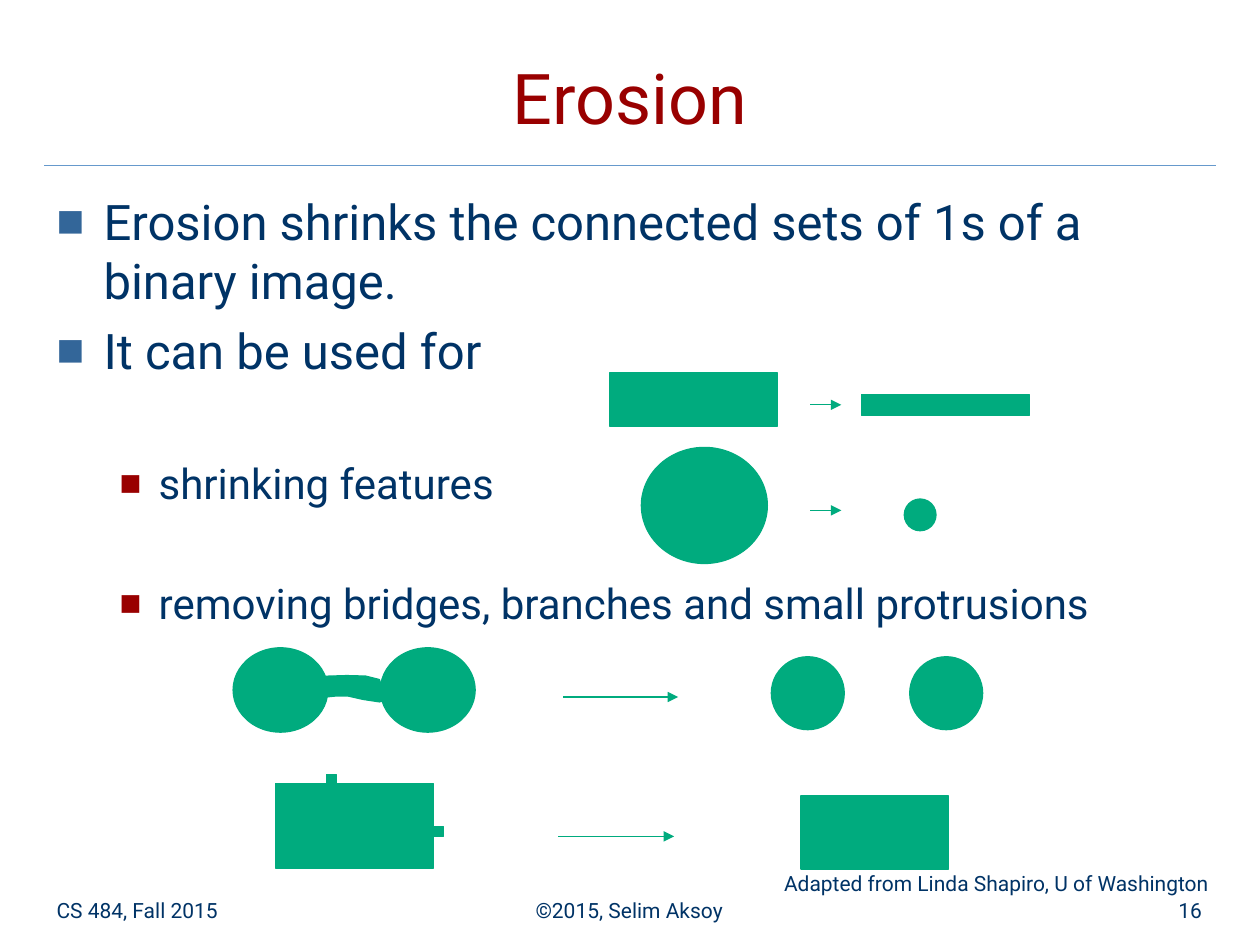
"""Builds the lecture slide on erosion with its bullets and shape diagrams."""
from dataclasses import dataclass

from lxml.etree import SubElement
from pptx import Presentation
from pptx.dml.color import RGBColor
from pptx.enum.shapes import MSO_CONNECTOR, MSO_SHAPE
from pptx.enum.text import MSO_ANCHOR, PP_ALIGN
from pptx.oxml.ns import qn
from pptx.util import Cm, Pt

FONT = "Roboto"
COLORS = {
    "title": "990000",
    "text": "003366",
    "rule": "6699CC",
    "bullet": "336699",
    "sub_bullet": "990000",
    "feature": "00AB7E",
}
BULLETS = [
    ("Erosion shrinks the connected sets of 1s of a binary image.", 0, 0),
    ("It can be used for", 0, 6.5),
    ("shrinking features", 1, 45),
    ("removing bridges, branches and small protrusions", 1, 39.5),
]
LEVELS = [
    {"size": 28, "margin": 0.95, "hang": 0.95, "color": "bullet", "scale": 60},
    {"size": 24, "margin": 2.06, "hang": 0.79, "color": "sub_bullet", "scale": 55},
]
BRIDGE = [
    (1.63, 0.58), (2.29, 0.56), (2.67, 0.57), (2.95, 0.64), (3, 0.81),
    (3.02, 1.07), (2.95, 1.09), (2.62, 1.04), (2.31, 0.97), (2.08, 0.97),
    (1.88, 0.99), (1.7, 1.04), (1.7, 0.84),
]


@dataclass
class Box:
    """A region of the page in centimetres."""
    left: float
    top: float
    width: float
    height: float


def color(name):
    """Return the named colour."""
    return RGBColor.from_string(COLORS[name])


def style_para(para, size, name, align=PP_ALIGN.LEFT):
    """Format a paragraph and its runs."""
    para.alignment = align
    for span in para.runs:
        span.font.size = Pt(size)
        span.font.name = FONT
        span.font.color.rgb = color(name)


def add_frame(page, box, anchor=MSO_ANCHOR.TOP):
    """Add a wrapping text box and return its text frame."""
    shape = page.shapes.add_textbox(
        Cm(box.left), Cm(box.top), Cm(box.width), Cm(box.height))
    frame = shape.text_frame
    frame.word_wrap = True
    frame.vertical_anchor = anchor
    return frame


def add_label(page, box, text, size, name, align, anchor=MSO_ANCHOR.BOTTOM):
    """Add a single line of text."""
    frame = add_frame(page, box, anchor)
    frame.text = text
    style_para(frame.paragraphs[0], size, name, align)


def add_line(shapes, start, end, name, arrow=False):
    """Add a thin straight line, with an arrowhead if wanted."""
    line = shapes.add_connector(
        MSO_CONNECTOR.STRAIGHT, *(Cm(value) for value in (*start, *end)))
    line.line.color.rgb = color(name)
    line.line.width = Pt(0.75)
    if arrow:
        SubElement(line.line._get_or_add_ln(), qn("a:tailEnd"), type="triangle")
    SubElement(line._element.spPr, qn("a:effectLst"))


def style_feature(shape):
    """Give a shape the solid feature colour."""
    shape.shadow.inherit = False
    shape.fill.solid()
    shape.fill.fore_color.rgb = color("feature")
    shape.line.color.rgb = color("feature")
    shape.line.width = Pt(0.75)


def add_feature(shapes, box, kind, left, top, width, height):
    """Add a solid shape at an offset inside the box."""
    style_feature(shapes.add_shape(
        kind, Cm(box.left + left), Cm(box.top + top), Cm(width), Cm(height)))


def add_arrow(shapes, box, left, right, top):
    """Add a horizontal arrow at an offset inside the box."""
    add_line(shapes, (box.left + left, box.top + top),
             (box.left + right, box.top + top), "feature", arrow=True)


def add_header(page, box):
    """Place the title above a rule."""
    title = Box(box.left, box.top, box.width, 2.39)
    add_label(page, title, "Erosion", 40, "title", PP_ALIGN.CENTER)
    bottom = box.top + box.height
    add_line(page.shapes, (box.left, bottom), (box.left + box.width, bottom), "rule")


def add_bullet(para, level):
    """Give a paragraph a square bullet and a hanging indent."""
    properties = para._p.get_or_add_pPr()
    properties.set("marL", str(Cm(level["margin"])))
    properties.set("indent", str(-Cm(level["hang"])))
    tint = SubElement(properties, qn("a:buClr"))
    SubElement(tint, qn("a:srgbClr"), val=COLORS[level["color"]])
    SubElement(properties, qn("a:buSzPct"), val=str(level["scale"] * 1000))
    SubElement(properties, qn("a:buFont"), typeface=FONT)
    SubElement(properties, qn("a:buChar"), char="■")


def add_body(page, box):
    """Place the two-level bullet list."""
    frame = add_frame(page, box)
    for index, (text, depth, space) in enumerate(BULLETS):
        para = frame.add_paragraph() if index else frame.paragraphs[0]
        para.text = text
        para.level = depth
        para.space_before = Pt(space)
        style_para(para, LEVELS[depth]["size"], "text")
        add_bullet(para, LEVELS[depth])


def add_shrinking(page, box):
    """Draw a bar and a disc that shrink."""
    shapes = page.shapes.add_group_shape().shapes
    add_feature(shapes, box, MSO_SHAPE.RECTANGLE, 0, 0, 3.38, 1.07)
    add_feature(shapes, box, MSO_SHAPE.RECTANGLE, 5.08, 0.43, 3.38, 0.43)
    add_feature(shapes, box, MSO_SHAPE.OVAL, 0.64, 1.5, 2.54, 2.34)
    add_feature(shapes, box, MSO_SHAPE.OVAL, 5.94, 2.54, 0.64, 0.64)
    for top in (0.64, 2.77):
        add_arrow(shapes, box, 4.04, 4.67, top)


def add_bridge_removal(page, box):
    """Draw two joined discs that come apart."""
    shapes = page.shapes.add_group_shape().shapes
    for left in (0, 2.97):
        add_feature(shapes, box, MSO_SHAPE.OVAL, left, 0, 1.91, 1.7)
    points = [(Cm(box.left + x), Cm(box.top + y)) for x, y in BRIDGE]
    builder = shapes.build_freeform(*points[0])
    builder.add_line_segments(points[1:], close=True)
    style_feature(builder.convert_to_shape())
    add_arrow(shapes, box, 6.65, 8.97, 0.99)
    for left in (10.85, 13.64):
        add_feature(shapes, box, MSO_SHAPE.OVAL, left, 0.18, 1.47, 1.47)


def add_protrusion_removal(page, box):
    """Draw a block that loses its small protrusions."""
    shapes = page.shapes.add_group_shape().shapes
    for left, top, width, height in (
            (0, 0.18, 3.18, 1.7), (3.18, 1.04, 0.2, 0.2),
            (1.02, 0, 0.2, 0.2), (10.59, 0.43, 2.97, 1.47)):
        add_feature(shapes, box, MSO_SHAPE.RECTANGLE, left, top, width, height)
    add_arrow(shapes, box, 5.69, 8.03, 1.24)


def add_footer(page, box):
    """Place the course, the copyright and the page number."""
    for text, left, width, align in (
            ("CS 484, Fall 2015", 0, 5.28, PP_ALIGN.LEFT),
            ("©2015, Selim Aksoy", 7.77, 8.05, PP_ALIGN.CENTER),
            ("16", 18.31, 5.28, PP_ALIGN.RIGHT)):
        part = Box(box.left + left, box.top, width, box.height)
        add_label(page, part, text, 12, "text", align)


def main():
    """Build and save the deck."""
    deck = Presentation()
    deck.slide_width, deck.slide_height = Cm(25.4), Cm(19.05)
    page = deck.slides.add_slide(deck.slide_layouts[6])
    add_header(page, Box(0.89, 0.53, 23.62, 2.8))
    add_body(page, Box(0.89, 3.73, 23.6, 13.79))
    add_shrinking(page, Box(12.29, 7.52, 8.46, 3.84))
    add_bridge_removal(page, Box(4.7, 13.06, 15.11, 1.7))
    add_protrusion_removal(page, Box(5.56, 15.62, 13.56, 1.9))
    add_footer(page, Box(0.89, 17.83, 23.6, 0.89))
    add_label(page, Box(15.09, 17.42, 9.53, 0.76),
              "Adapted from Linda Shapiro, U of Washington",
              12, "text", PP_ALIGN.RIGHT, MSO_ANCHOR.TOP)
    deck.save("out.pptx")


if __name__ == "__main__":
    main()
